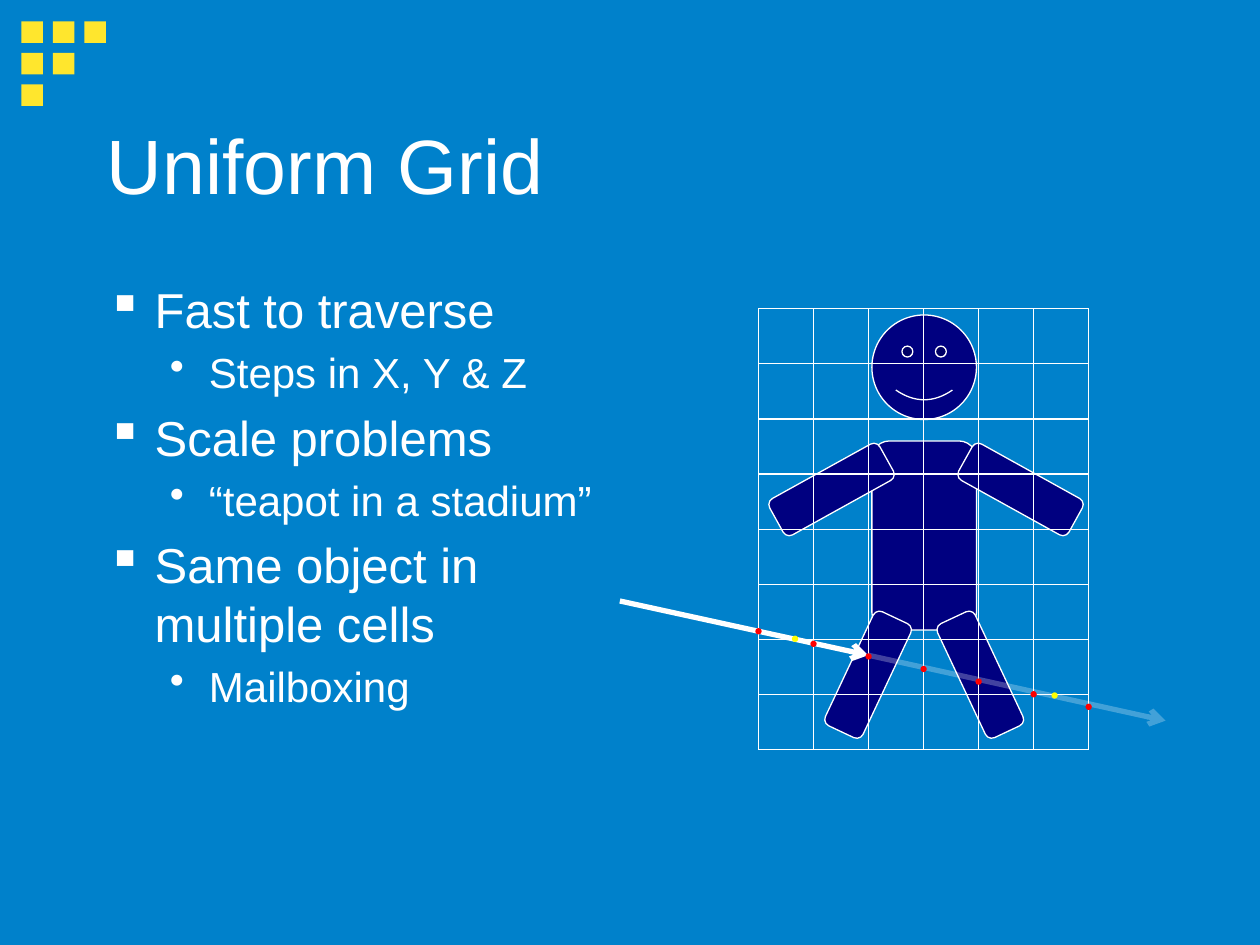
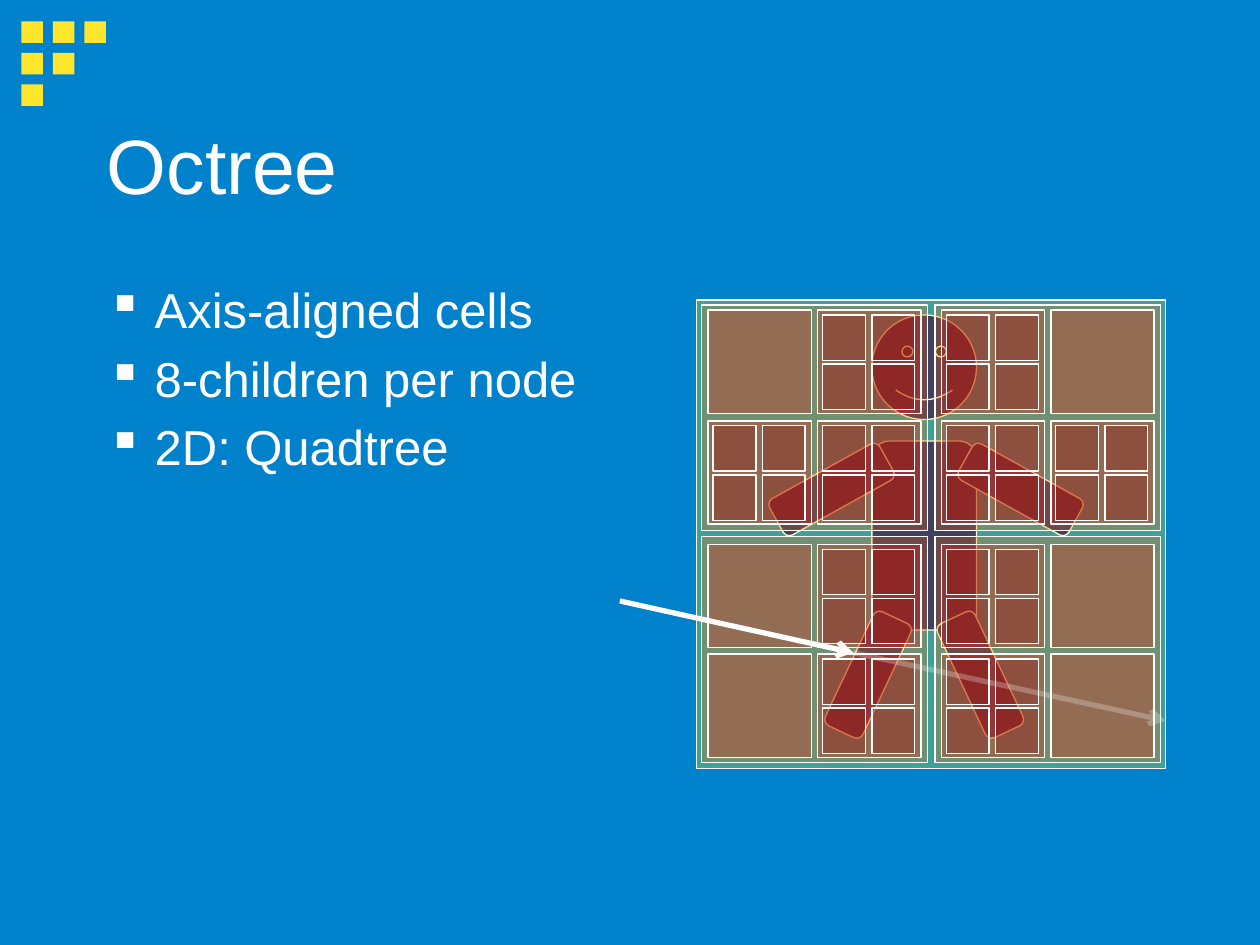
from itertools import product

from lxml import etree
from pptx import Presentation
from pptx.dml.color import RGBColor
from pptx.enum.shapes import MSO_CONNECTOR, MSO_SHAPE
from pptx.enum.text import MSO_ANCHOR
from pptx.oxml.ns import qn
from pptx.util import Inches, Pt

RECT = MSO_SHAPE.RECTANGLE
ROUND = MSO_SHAPE.ROUNDED_RECTANGLE
OVAL = MSO_SHAPE.OVAL
SMILE = MSO_SHAPE.SMILEY_FACE
LINE = MSO_CONNECTOR.STRAIGHT

THEME = {
    "back": "0081CB", "mark": "FFE62D", "ink": "FFFFFF", "body": "000080",
    "root": "FFFF00", "quad": "FF6600", "cell": "FF0000", "leaf": "800000",
    "hit": "FF0000", "near": "FFFF00",
    "font": "Arial", "title": 44, "text": [28, 24], "thin": 0.75, "thick": 3,
    "fade": 25,
}
COLOR = {key: RGBColor.from_string(val) for key, val in THEME.items()
         if isinstance(val, str) and len(val) == 6}
BULLETS = [("▪", 0.38, 0.38), ("•", 0.81, 0.31)]  # sign, left edge, hang


def fade(item, alpha):
    """Set the opacity, in percent, of the first colour of the item."""
    color = next(item.element.iter(qn("a:srgbClr")))
    etree.SubElement(color, qn("a:alpha"), val=str(alpha * 1000))


def draw(slide, kind, box, fill, edge=True, turn=0, alpha=100):
    shape = slide.shapes.add_shape(kind, *map(Inches, box))
    shape.shadow.inherit = False
    shape.rotation = turn
    shape.fill.solid()
    shape.fill.fore_color.rgb = COLOR[fill]
    if edge:
        shape.line.color.rgb = COLOR["ink"]
        shape.line.width = Pt(THEME["thin"])
    else:
        shape.line.fill.background()
    if alpha < 100:
        fade(shape, alpha)


# Yellow corner squares: a triangle of three rows
marks = [(0.17 + 0.25 * col, 0.17 + 0.25 * row, 0.17, 0.17)
         for row in range(3) for col in range(3 - row)]

# Figure: kind, box, turn
figure = [
    (SMILE, (6.92, 2.5, 0.83, 0.83), 0),
    (ROUND, (6.92, 3.5, 0.83, 1.5), 0),
    (ROUND, (6.1, 3.72, 1, 0.33), 331),
    (ROUND, (7.6, 3.72, 1, 0.33), 29),
    (ROUND, (6.39, 5.19, 1, 0.33), 295.2),
    (ROUND, (7.28, 5.19, 1, 0.33), 64.8),
]

# Uniform grid: 6 by 8 cells, with the points where the ray crosses them
left, top, right, low = 6.02, 2.45, 8.64, 5.95
cols, rows = 6, 8
wide, high = (right - left) / cols, (low - top) / rows
grid = [(left + i * wide, top, left + i * wide, low) for i in range(cols + 1)]
grid += [(left, top + i * high, right, top + i * high) for i in range(rows + 1)]
dot = 0.05
hits = [(left + i * wide, 5.01 + i * 0.1, "hit") for i in range(cols + 1)]
hits += [(6.31, 5.07, "near"), (8.37, 5.52, "near")]

# Octree: each level sits inside the one before
tree = [((5.53, 2.38, 3.72, 3.72), "root")]
tree += [((x, y, 1.79, 1.79), "quad")
         for y, x in product((2.42, 4.26), (5.57, 7.42))]
cells = list(product(enumerate((2.46, 3.34, 4.32, 5.19)),
                     enumerate((5.62, 6.49, 7.47, 8.34))))
tree += [((x, y, 0.82, 0.82), "cell") for (_, y), (_, x) in cells]
for (row, y), (col, x) in cells:
    if col in (1, 2) or row == 1:
        tree += [((x + dx, y + dy, 0.34, 0.36), "leaf")
                 for dy, dx in product((0.04, 0.43), repeat=2)]

# Text lines are (level, words); a ray changes from solid to faint at its stop
pages = [
    {"title": "Uniform Grid",
     "text": [(0, "Fast to traverse"), (1, "Steps in X, Y & Z"),
              (0, "Scale problems"), (1, "“teapot in a stadium”"),
              (0, "Same object in multiple cells"), (1, "Mailboxing")],
     "tree": [], "grid": grid, "hits": hits, "stop": (6.89, 5.2)},
    {"title": "Octree",
     "text": [(0, "Axis-aligned cells"), (0, "8-children per node"),
              (0, "2D: Quadtree")],
     "tree": tree, "grid": [], "hits": [], "stop": (6.77, 5.18)},
]

deck = Presentation()
deck.slide_width, deck.slide_height = Inches(10), Inches(7.5)
back = deck.slide_master.background.fill
back.solid()
back.fore_color.rgb = COLOR["back"]

for page in pages:
    slide = deck.slides.add_slide(deck.slide_layouts[6])
    for box in marks:
        draw(slide, RECT, box, "mark", edge=False)

    blocks = [
        ((0.75, 0.67, 8.5, 1.25), MSO_ANCHOR.MIDDLE, [(None, page["title"])]),
        ((0.75, 2.17, 4.17, 4.5), MSO_ANCHOR.TOP, page["text"]),
    ]
    for box, anchor, lines in blocks:
        frame = slide.shapes.add_textbox(*map(Inches, box)).text_frame
        for name, val in {"word_wrap": True, "vertical_anchor": anchor}.items():
            setattr(frame, name, val)
        for i, (level, words) in enumerate(lines):
            para = frame.add_paragraph() if i else frame.paragraphs[0]
            para.text = words
            size = THEME["title"]
            if level is not None:
                size = THEME["text"][level]
                sign, indent, hang = BULLETS[level]
                para.level = level
                props = para._p.get_or_add_pPr()
                props.set("marL", str(Inches(indent)))
                props.set("indent", str(-Inches(hang)))
                if i:
                    space = etree.SubElement(props, qn("a:spcBef"))
                    etree.SubElement(space, qn("a:spcPct"), val="20000")
                etree.SubElement(props, qn("a:buChar"), char=sign)
            style = {"name": THEME["font"], "size": Pt(size)}
            for name, val in style.items():
                setattr(para.runs[0].font, name, val)
            para.runs[0].font.color.rgb = COLOR["ink"]

    for kind, box, turn in figure:
        draw(slide, kind, box, "body", turn=turn)
    for box, fill in page["tree"]:
        draw(slide, RECT, box, fill, alpha=THEME["fade"])

    stop = page["stop"]
    rules = [(ends, "thin", 100) for ends in page["grid"]]
    rules += [((4.92, 4.77, *stop), "thick", 100),
              ((*stop, 9.25, 5.72), "thick", THEME["fade"])]
    for ends, width, alpha in rules:
        rule = slide.shapes.add_connector(LINE, *map(Inches, ends))
        rule.line.color.rgb = COLOR["ink"]
        rule.line.width = Pt(THEME[width])
        if width == "thick":
            etree.SubElement(rule.line._get_or_add_ln(), qn("a:tailEnd"),
                             type="arrow")
        if alpha < 100:
            fade(rule, alpha)
        etree.SubElement(rule.element.spPr, qn("a:effectLst"))

    for x, y, fill in page["hits"]:
        draw(slide, OVAL, (x - dot / 2, y - dot / 2, dot, dot), fill, edge=False)

deck.save("out.pptx")
